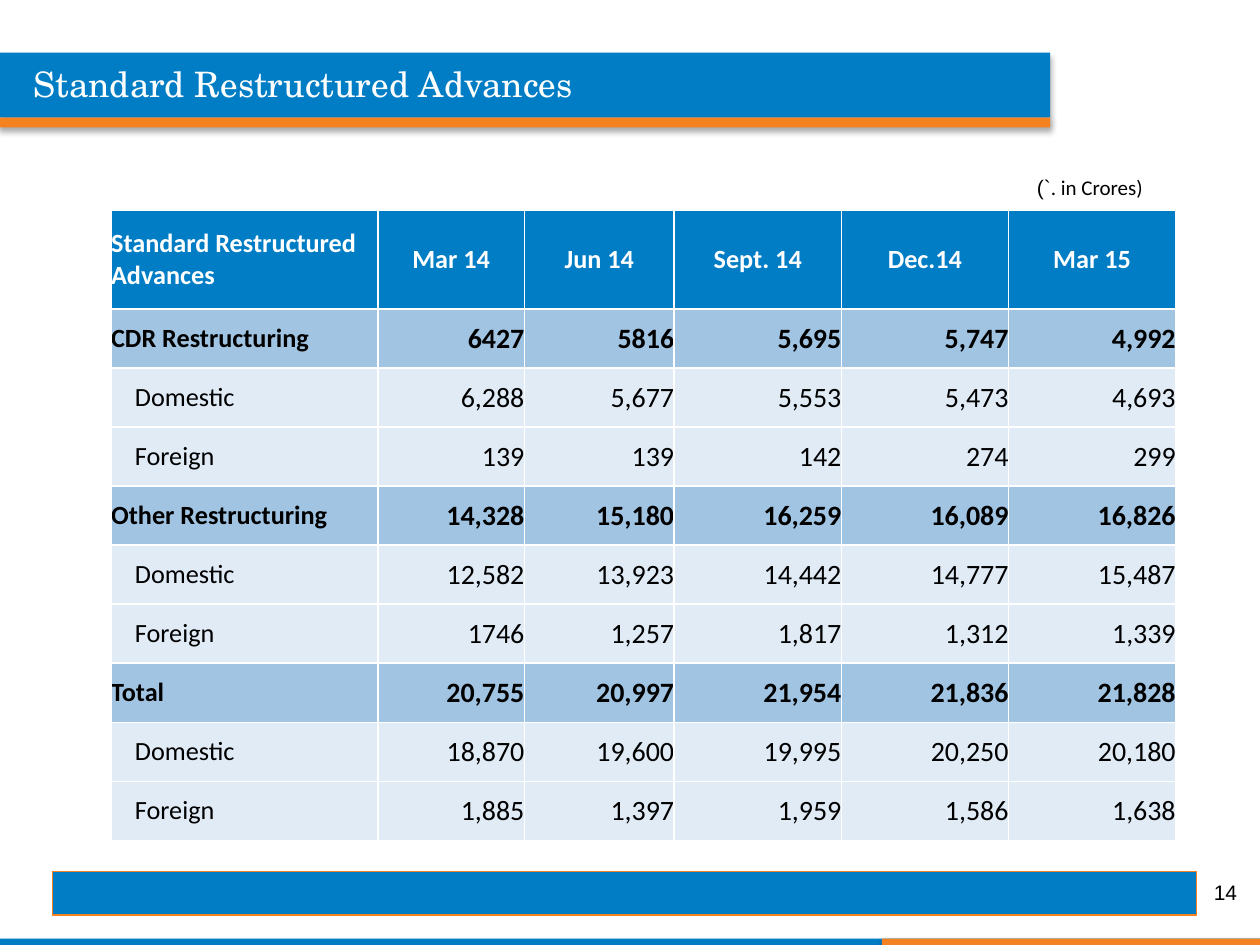
from typing import Any, NamedTuple

from lxml import etree
from pptx import Presentation
from pptx.dml.color import RGBColor
from pptx.enum.shapes import MSO_SHAPE
from pptx.enum.text import MSO_ANCHOR, MSO_AUTO_SIZE, PP_ALIGN
from pptx.oxml import parse_xml
from pptx.oxml.ns import nsdecls
from pptx.util import Cm, Pt

RECT = MSO_SHAPE.RECTANGLE
TOP, MIDDLE = MSO_ANCHOR.TOP, MSO_ANCHOR.MIDDLE
LEFT, CENTER, RIGHT = PP_ALIGN.LEFT, PP_ALIGN.CENTER, PP_ALIGN.RIGHT
NO_FIT = MSO_AUTO_SIZE.NONE

BLUE = RGBColor(0x00, 0x7D, 0xC5)
ORANGE = RGBColor(0xF5, 0x82, 0x20)
MID = RGBColor(0xA1, 0xC4, 0xE3)
PALE = RGBColor(0xE0, 0xEB, 0xF6)
WHITE = RGBColor(0xFF, 0xFF, 0xFF)
BLACK = RGBColor(0x00, 0x00, 0x00)


class Bar(NamedTuple):
    left: float
    top: float
    width: float
    height: float
    color: RGBColor
    shade: bool = True


class Row(NamedTuple):
    label: str
    values: tuple[str, ...]
    main: bool = False


BARS = [
    Bar(0, 18.92, 25.4, 0.13, BLUE),
    Bar(17.78, 18.92, 7.62, 0.13, ORANGE),
    Bar(0, 1.06, 21.17, 1.31, BLUE),
    Bar(0, 2.37, 21.17, 0.2, ORANGE),
    Bar(1.06, 17.57, 23.06, 0.88, BLUE, False),
]

HEAD = Row("Standard Restructured Advances",
           ("Mar 14", "Jun 14", "Sept. 14", "Dec.14", "Mar 15"))
ROWS = [
    Row("CDR Restructuring", ("6427", "5816", "5,695", "5,747", "4,992"), True),
    Row("Domestic", ("6,288", "5,677", "5,553", "5,473", "4,693")),
    Row("Foreign", ("139", "139", "142", "274", "299")),
    Row("Other Restructuring",
        ("14,328", "15,180", "16,259", "16,089", "16,826"), True),
    Row("Domestic", ("12,582", "13,923", "14,442", "14,777", "15,487")),
    Row("Foreign", ("1746", "1,257", "1,817", "1,312", "1,339")),
    Row("Total", ("20,755", "20,997", "21,954", "21,836", "21,828"), True),
    Row("Domestic", ("18,870", "19,600", "19,995", "20,250", "20,180")),
    Row("Foreign", ("1,885", "1,397", "1,959", "1,586", "1,638")),
]
COLS = (5.38, 2.95, 3.02, 3.37, 3.37, 3.37)
HEAD_ROW, BODY_ROW = 1.99, 1.19
INDENT = 0.48


def apply(target: Any, style: dict[str, Any]) -> None:
    for key, value in style.items():
        setattr(target, key, value)


def write(para: Any, text: str, color: RGBColor, **style: Any) -> None:
    run = para.add_run()
    run.text = text
    apply(run.font, style)
    run.font.color.rgb = color


def place(shape: Any, left: float, top: float, width: float, height: float) -> None:
    apply(shape, {"left": Cm(left), "top": Cm(top),
                  "width": Cm(width), "height": Cm(height)})


def add_shade(shape: Any) -> None:
    effects = shape.element.spPr.find("{*}effectLst")
    effects.append(parse_xml(
        f'<a:outerShdw {nsdecls("a")} blurRad="44450" dist="27940" '
        'dir="5400000" algn="ctr" rotWithShape="0"><a:srgbClr val="000000">'
        '<a:alpha val="32000"/></a:srgbClr></a:outerShdw>'))


def draw_bar(shapes: Any, bar: Bar) -> None:
    shape = shapes.add_shape(RECT, *(Cm(size) for size in bar[:4]))
    shape.shadow.inherit = False
    shape.fill.solid()
    shape.fill.fore_color.rgb = bar.color
    if bar.shade:
        shape.line.fill.background()
        add_shade(shape)
    else:
        shape.line.color.rgb = ORANGE
        shape.line.width = Pt(0.75)


def add_rules(cell: Any) -> None:
    props = cell._tc.get_or_add_tcPr()
    for side in ("lnL", "lnR", "lnT", "lnB"):
        rule = parse_xml(f'<a:{side} {nsdecls("a")} w="12700"><a:solidFill/></a:{side}>')
        etree.SubElement(rule[0], rule[0].tag.replace("solidFill", "srgbClr"),
                         val=str(WHITE))
        props.append(rule)


def fill_cell(cell: Any, text: str, fill: RGBColor, color: RGBColor,
              align: Any, size: int, bold: bool, indent: float = 0) -> None:
    add_rules(cell)
    cell.fill.solid()
    cell.fill.fore_color.rgb = fill
    apply(cell, {"margin_left": Cm(indent), "margin_right": 0, "margin_top": 0,
                 "margin_bottom": 0, "vertical_anchor": MIDDLE})
    para = cell.text_frame.paragraphs[0]
    para.alignment = align
    write(para, text, color, size=Pt(size), bold=bold, name="Calibri")


def draw_table(shapes: Any) -> None:
    high = HEAD_ROW + BODY_ROW * len(ROWS)
    table = shapes.add_table(len(ROWS) + 1, len(COLS), Cm(2.24), Cm(4.24),
                             Cm(sum(COLS)), Cm(high)).table
    for col, width in zip(table.columns, COLS):
        col.width = Cm(width)
    for index, row in enumerate([HEAD, *ROWS]):
        head = index == 0
        table.rows[index].height = Cm(HEAD_ROW if head else BODY_ROW)
        fill = BLUE if head else MID if row.main else PALE
        color = WHITE if head else BLACK
        bold = head or row.main
        fill_cell(table.cell(index, 0), row.label, fill, color, LEFT, 15, bold,
                  0 if bold else INDENT)
        for col, value in enumerate(row.values, 1):
            fill_cell(table.cell(index, col), value, fill, color,
                      CENTER if head else RIGHT, 15 if head else 16, bold)


def add_box(shapes: Any, left: float, top: float, width: float, height: float,
            **style: Any) -> Any:
    frame = shapes.add_textbox(Cm(left), Cm(top), Cm(width), Cm(height)).text_frame
    apply(frame, style)
    para = frame.paragraphs[0]
    para.alignment = RIGHT
    return para


def main() -> None:
    deck = Presentation()
    apply(deck, {"slide_width": Cm(25.4), "slide_height": Cm(19.05)})
    slide = deck.slides.add_slide(deck.slide_layouts[5])
    shapes = slide.shapes
    title = shapes.title

    for bar in BARS:
        draw_bar(shapes, bar)
    draw_table(shapes)

    unit = add_box(shapes, 20.52, 3.39, 2.77, 0.76, word_wrap=False)
    write(unit, "(`", BLACK, size=Pt(12), name="Arial")
    write(unit, ". in Crores)", BLACK, size=Pt(12), name="Calibri")

    place(title, 0.42, 1.14, 20.32, 1.11)
    apply(title.text_frame, {"word_wrap": True, "auto_size": NO_FIT,
                             "vertical_anchor": TOP})
    para = title.text_frame.paragraphs[0]
    para.alignment = LEFT
    write(para, "Standard Restructured Advances", WHITE, size=Pt(20),
          name="TeX Gyre Schola")
    title.element.getparent().append(title.element)

    page = add_box(shapes, 19.26, 17.48, 5.93, 1.01, word_wrap=True,
                   vertical_anchor=MIDDLE)
    write(page, "14", BLACK, size=Pt(12), name="Arial")

    deck.save("out.pptx")


if __name__ == "__main__":
    main()
